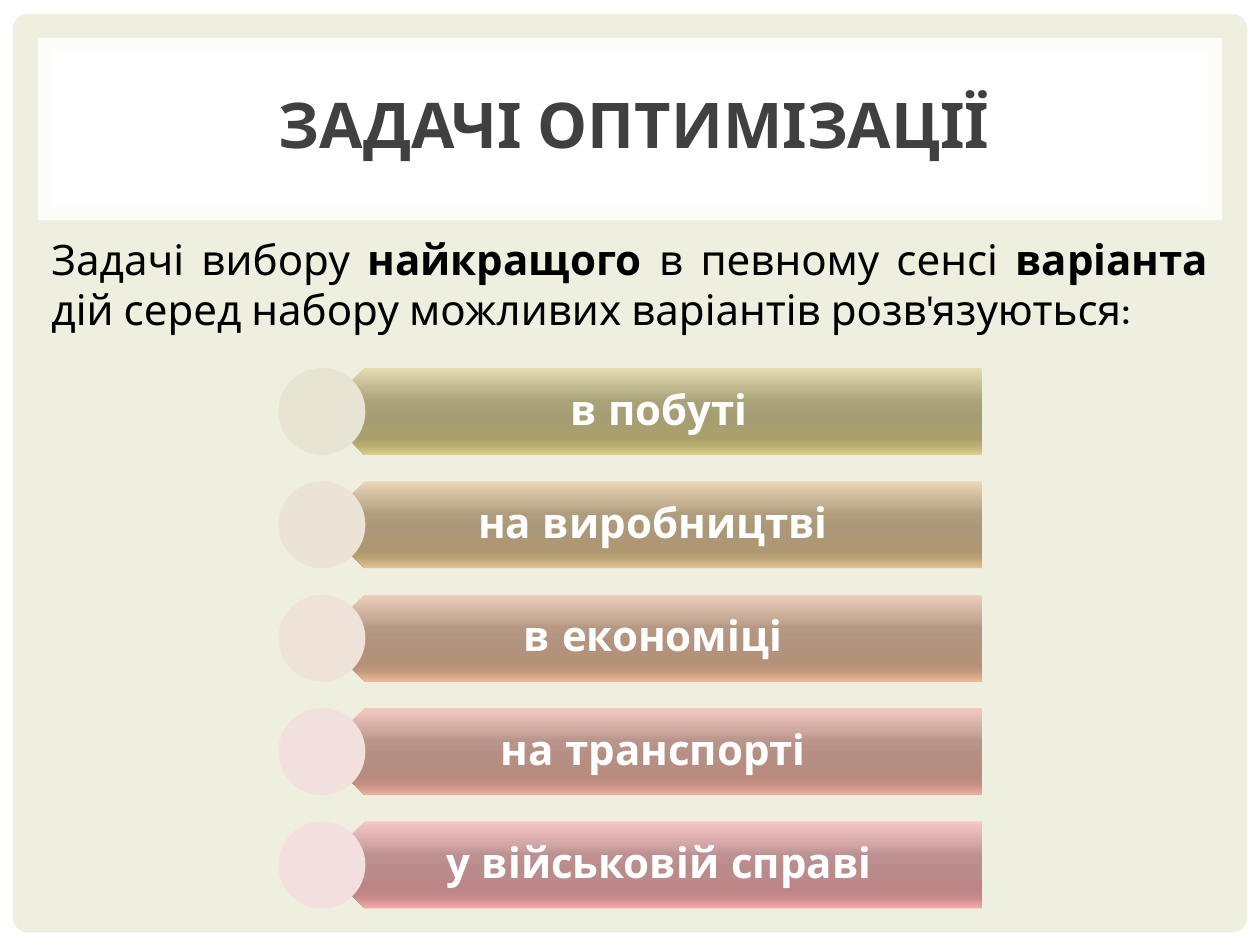
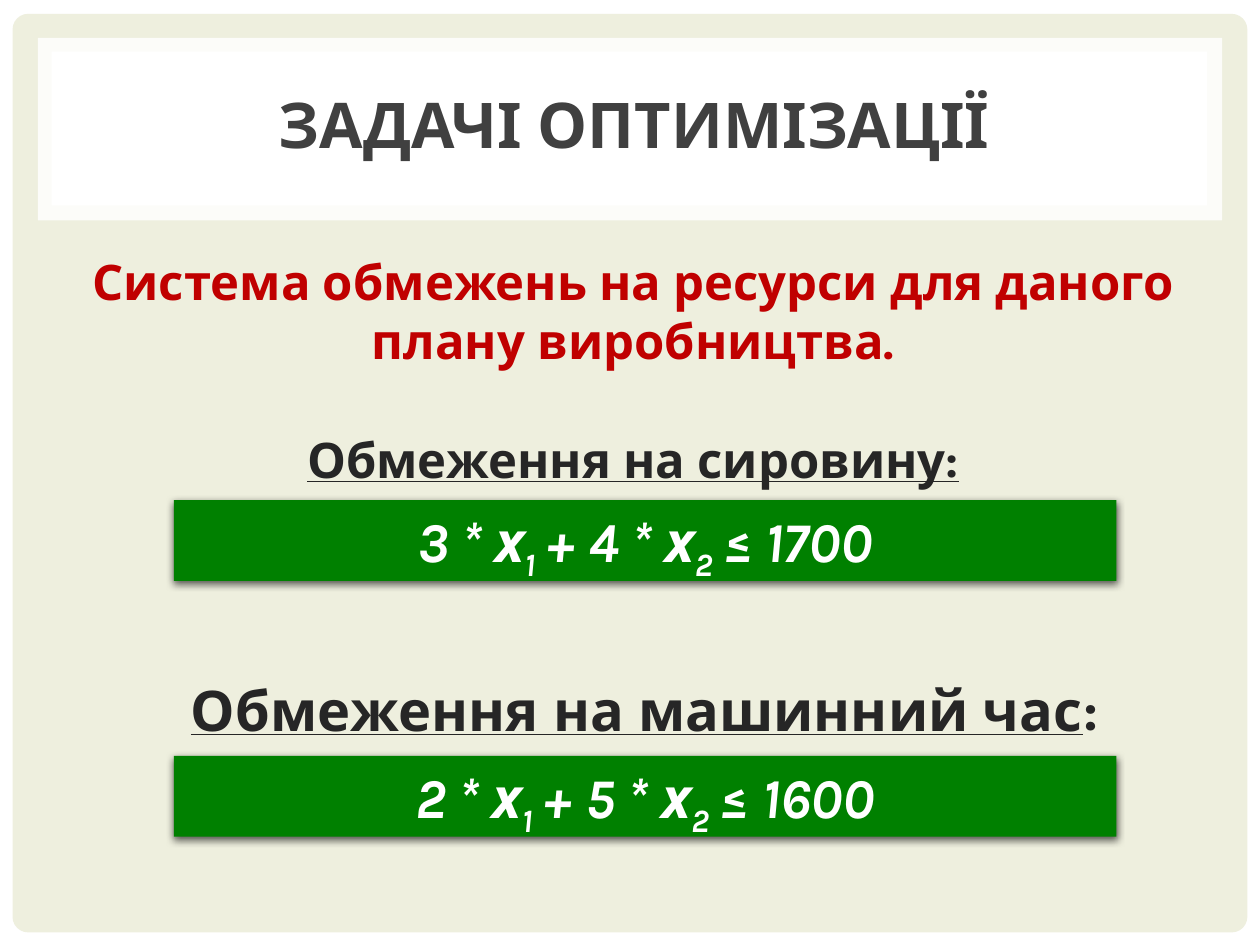
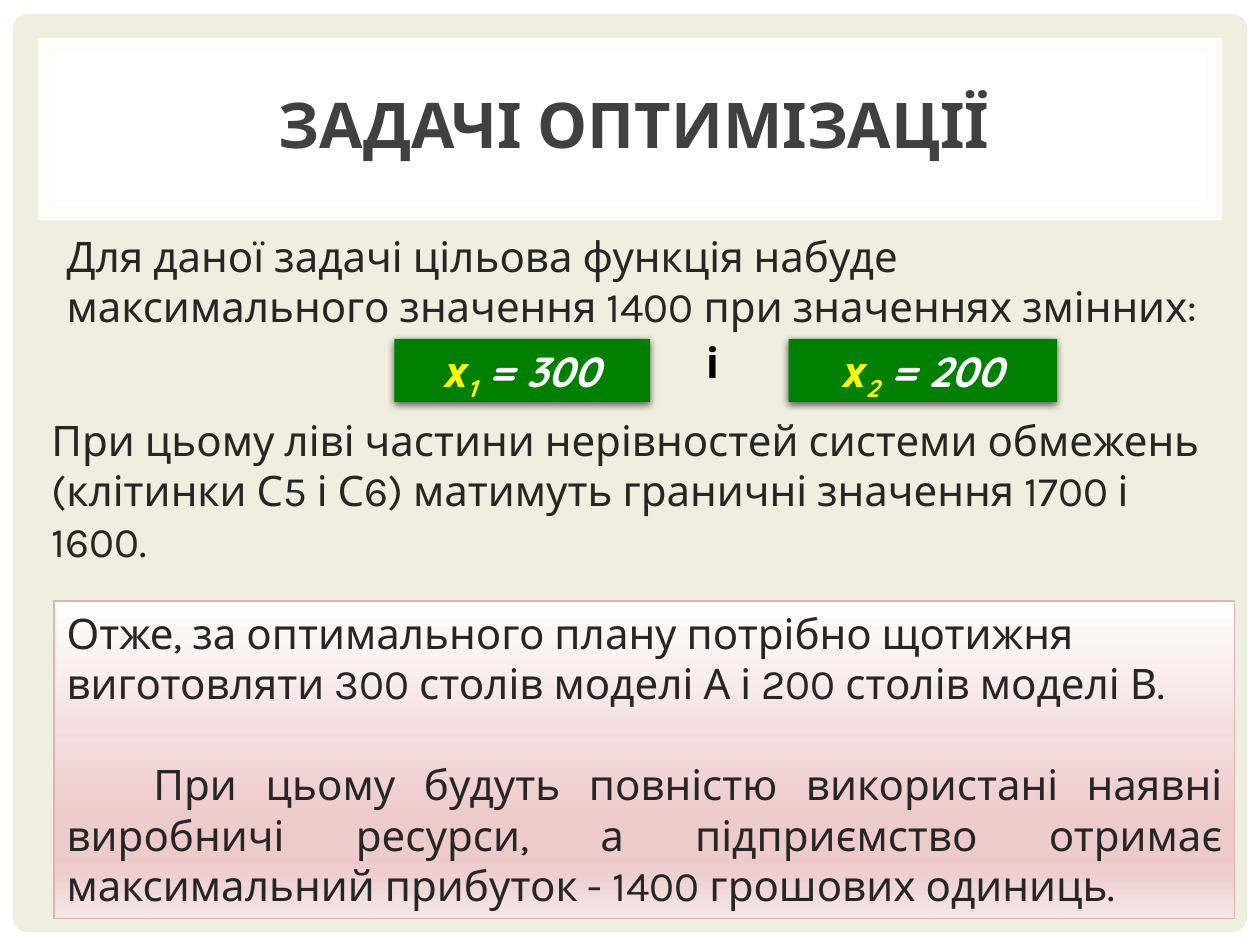
from dataclasses import dataclass

from lxml import etree
from pptx import Presentation
from pptx.dml.color import RGBColor
from pptx.enum.shapes import MSO_SHAPE
from pptx.enum.text import MSO_ANCHOR, PP_ALIGN
from pptx.oxml.ns import qn
from pptx.util import Inches, Pt

RECTANGLE = MSO_SHAPE.RECTANGLE
ROUNDED = MSO_SHAPE.ROUNDED_RECTANGLE
PENTAGON = MSO_SHAPE.PENTAGON
OVAL = MSO_SHAPE.OVAL
LEFT, CENTER, JUSTIFY = PP_ALIGN.LEFT, PP_ALIGN.CENTER, PP_ALIGN.JUSTIFY
TOP, MIDDLE = MSO_ANCHOR.TOP, MSO_ANCHOR.MIDDLE


@dataclass(frozen=True)
class Theme:
    body_font: str = "Karla"
    accent_font: str = "Quicksand"
    cream: str = "EEEFDE"
    white: str = "FFFFFF"
    black: str = "000000"
    title_ink: str = "404040"
    ink: str = "262626"
    red: str = "C00000"
    green: str = "008000"
    yellow: str = "FFFF00"
    pink_line: str = "E4B2B2"
    title_size: int = 36
    large: int = 32
    medium: int = 28
    body: int = 24


THEME = Theme()
TITLE = "ЗАДАЧІ ОПТИМІЗАЦІЇ"
DEFAULT_INSETS = (0.1, 0.05, 0.1, 0.05)
BAR_STOPS = (0, 25, 38, 55, 80, 88, 100)

# Bar text, circle colour, gradient colours from top to bottom
AREAS = [
    ("в побуті", "E8E4D3", "E5DCB2 BEB68D AAA279 A69D72 AAA06C B6AA6E DDD08A"),
    ("на виробництві ", "EBE3D6", "EAD6B6 C4B293 AF9D7E AB9878 AF9871 BCA174 E5C591"),
    ("в економіці ", "EFE2D9", "EFCFBB CAAE9A B49884 B1937E B59177 C1987A EBBB98"),
    ("на транспорті ", "F1E0DC", "F3CAC0 D0AAA1 B9948A B58F84 B98B7E C69082 F1B2A1"),
    ("у військовій справі", "F4DFDF", "F7C6C6 D4A8A8 BD9191 BA8B8B BD8686 CA8A8A F6ABAB"),
]
CONCLUSION_GRADIENT = [(0, "FFFEFE"), (68, "EECBCB"), (81, "EDC9C9"),
                       (86, "EECECE"), (100, "F7E9E9")]


def rgb(color):
    return RGBColor.from_string(color)


def color_element(parent, color, alpha=None):
    element = etree.SubElement(parent, qn("a:srgbClr"), val=color)
    if alpha is not None:
        etree.SubElement(element, qn("a:alpha"), val=str(alpha * 1000))


class Deck:
    """Holds the presentation, its theme and the slide being built."""

    def __init__(self, theme):
        self.theme = theme
        self.presentation = Presentation()
        self.presentation.slide_width = Inches(10)
        self.presentation.slide_height = Inches(7.5)
        self.slide = None

    def new_slide(self, title):
        theme = self.theme
        self.slide = self.presentation.slides.add_slide(self.presentation.slide_layouts[6])
        background = self.slide.background.fill
        background.solid()
        background.fore_color.rgb = rgb(theme.cream)
        # Frame and title band
        self.shape(RECTANGLE, (0, 0, 10, 7.5), theme.white)
        panel = self.shape(ROUNDED, (0.1, 0.11, 9.8, 7.29), theme.cream)
        panel.adjustments[0] = 0.017
        self.shape(RECTANGLE, (0.3, 0.3, 9.4, 1.45), theme.white, alpha=83)
        self.shape(RECTANGLE, (0.41, 0.41, 9.17, 1.22), theme.white)
        heading = self.text_box((0.43, 0.52, 9.21, 0.92), anchor=MIDDLE)
        self.paragraph(heading, [(title, {})], size=theme.title_size,
                       color=theme.title_ink, bold=True, align=CENTER)

    def shape(self, kind, box, fill, alpha=None, line=None):
        """Add a preset shape; fill is a colour or a list of gradient stops."""
        shape = self.slide.shapes.add_shape(kind, *map(Inches, box))
        shape.shadow.inherit = False
        if isinstance(fill, str):
            shape.fill.solid()
            shape.fill.fore_color.rgb = rgb(fill)
            if alpha is not None:
                color = shape._element.spPr.find(qn("a:solidFill"))[0]
                etree.SubElement(color, qn("a:alpha"), val=str(alpha * 1000))
        else:
            self.gradient(shape, fill)
        if line:
            shape.line.color.rgb = rgb(line)
            shape.line.width = Pt(0.75)
        else:
            shape.line.fill.background()
        return shape

    def gradient(self, shape, stops):
        """Fill from top to bottom, whatever the rotation of the shape."""
        shape.fill.gradient()
        shape.fill.gradient_angle = 270
        gradient = shape._element.spPr.find(qn("a:gradFill"))
        gradient.set("rotWithShape", "0")
        stop_list = gradient.find(qn("a:gsLst"))
        for stop in list(stop_list):
            stop_list.remove(stop)
        for position, color in stops:
            stop = etree.SubElement(stop_list, qn("a:gs"), pos=str(position * 1000))
            color_element(stop, color)

    def frame(self, shape, anchor=TOP, insets=DEFAULT_INSETS):
        frame = shape.text_frame
        frame.word_wrap = True
        frame.vertical_anchor = anchor
        (frame.margin_left, frame.margin_top,
         frame.margin_right, frame.margin_bottom) = map(Inches, insets)
        return frame

    def text_box(self, box, anchor=TOP, insets=DEFAULT_INSETS):
        shape = self.slide.shapes.add_textbox(*map(Inches, box))
        return self.frame(shape, anchor, insets)

    def paragraph(self, frame, runs, size=None, color=None, font=None, bold=False,
                  italic=False, underline=False, align=LEFT, before=0, indent=0):
        """Add a paragraph of (text, overrides) runs; a text "\\n" is a line break."""
        paragraph = frame.paragraphs[0]
        if paragraph.runs:
            paragraph = frame.add_paragraph()
        paragraph.alignment = align
        paragraph.space_before = Pt(before)
        if indent:
            paragraph._p.get_or_add_pPr().set("indent", str(Inches(indent)))
        for text, overrides in runs:
            if text == "\n":
                paragraph.add_line_break()
                continue
            run = paragraph.add_run()
            run.text = text
            run.font.name = font or self.theme.body_font
            run.font.size = Pt(size or self.theme.body)
            run.font.bold = overrides.get("bold", bold)
            run.font.italic = italic
            run.font.underline = overrides.get("underline", underline)
            run.font.color.rgb = rgb(overrides.get("color", color or self.theme.ink))
            if overrides.get("subscript"):
                run._r.get_or_add_rPr().set("baseline", "-25000")
        return paragraph

    def formula(self, box, runs, size, font):
        """Add a green plate with a soft shadow and a formula."""
        plate = self.shape(RECTANGLE, box, self.theme.green)
        effects = plate._element.spPr.find(qn("a:effectLst"))
        shadow = etree.SubElement(effects, qn("a:outerShdw"), blurRad=str(Pt(4.5)),
                                  dist=str(Pt(1.5)), dir="5400000", rotWithShape="0")
        color_element(shadow, self.theme.black, alpha=63)
        self.paragraph(self.frame(plate), runs, size=size, font=font,
                       color=self.theme.white, bold=True, italic=True, align=CENTER)

    def area_bar(self, top, text, circle_color, gradient_colors):
        """Add a bar pointing left, its label and the circle over its tip."""
        height = 0.69
        box = (2.55, top, 5.24, height)
        bar = self.shape(PENTAGON, box, list(zip(BAR_STOPS, gradient_colors.split())))
        bar.rotation = 180
        label = self.text_box(box, MIDDLE, insets=(0.31, 0.1, 0.19, 0.1))
        paragraph = self.paragraph(label, [(text, {})], font=self.theme.accent_font,
                                   color=self.theme.white, bold=True, align=CENTER)
        paragraph.line_spacing = 0.9
        self.shape(OVAL, (2.21, top, height, height), circle_color)


def build_areas(deck):
    deck.new_slide(TITLE)
    for index, area in enumerate(AREAS):
        deck.area_bar(2.92 + 0.9 * index, *area)
    strong = {"bold": True}
    intro = deck.text_box((0.31, 1.8, 9.38, 0.91))
    deck.paragraph(intro, [
        ("Задачі вибору ", {}), ("найкращого", strong), (" в певному сенсі ", {}),
        ("варіанта", strong), ("\n", {}),
        ("дій серед набору можливих варіантів розв'язуються:", {}),
    ], color=THEME.black, align=JUSTIFY)


def build_constraints(deck):
    deck.new_slide(TITLE)
    heading = deck.text_box((0.2, 1.95, 9.65, 1.99))
    deck.paragraph(heading, [("Система обмежень на ресурси для даного плану виробництва.", {})],
                   size=THEME.medium, color=THEME.red, bold=True, align=CENTER)
    deck.paragraph(heading, [("Обмеження на сировину:", {})], size=THEME.medium,
                   bold=True, underline=True, align=CENTER, before=34)
    # Inequalities
    subscript = {"subscript": True}
    for top, first, second, limit in ((3.97, 3, 4, 1700), (6, 2, 5, 1600)):
        deck.formula((1.38, top, 7.48, 0.64), [
            (f"{first} * х", {}), ("1", subscript), (f" + {second} * х", {}),
            ("2", subscript), (f" ≤ {limit}", {}),
        ], THEME.large, THEME.body_font)
    machine_time = deck.text_box((0.51, 5.31, 9.21, 0.64))
    deck.paragraph(machine_time, [("Обмеження на машинний час", {}), (":", {"underline": False})],
                   size=THEME.large, bold=True, underline=True, align=CENTER)


def build_solution(deck):
    deck.new_slide(TITLE)
    for box, text in (
        ((0.43, 1.78, 9.21, 0.91),
         "Для даної задачі цільова функція набуде максимального значення 1400 "
         "при значеннях змінних:"),
        ((0.31, 3.24, 9.33, 1.31),
         "При цьому ліві частини нерівностей системи обмежень (клітинки С5 і С6) "
         "матимуть граничні значення 1700 і 1600."),
    ):
        deck.paragraph(deck.text_box(box), [(text, {})])
    # Optimal values
    for left, width, number, value in ((3.13, 2.03, "1", 300), (6.26, 2.13, "2", 200)):
        deck.formula((left, 2.69, width, 0.5), [
            ("х", {"color": THEME.yellow}),
            (number, {"color": THEME.yellow, "subscript": True}),
            (f" = {value}", {}),
        ], THEME.body, THEME.accent_font)
    deck.paragraph(deck.text_box((5.51, 2.62, 0.59, 0.5)), [("і", {})],
                   font=THEME.accent_font, color=THEME.black, bold=True)
    # Conclusion
    panel = deck.shape(RECTANGLE, (0.43, 4.77, 9.37, 2.52), CONCLUSION_GRADIENT,
                       line=THEME.pink_line)
    conclusion = deck.frame(panel)
    deck.paragraph(conclusion, [("Отже, за оптимального плану потрібно щотижня виготовляти "
                                 "300 столів моделі А і 200 столів моделі В.", {})])
    deck.paragraph(conclusion, [("При цьому будуть повністю використані наявні виробничі "
                                 "ресурси, а підприємство отримає максимальний прибуток - "
                                 "1400 грошових одиниць.", {})],
                   align=JUSTIFY, before=29, indent=0.69)


def main():
    deck = Deck(THEME)
    build_areas(deck)
    build_constraints(deck)
    build_solution(deck)
    deck.presentation.save("out.pptx")


if __name__ == "__main__":
    main()
